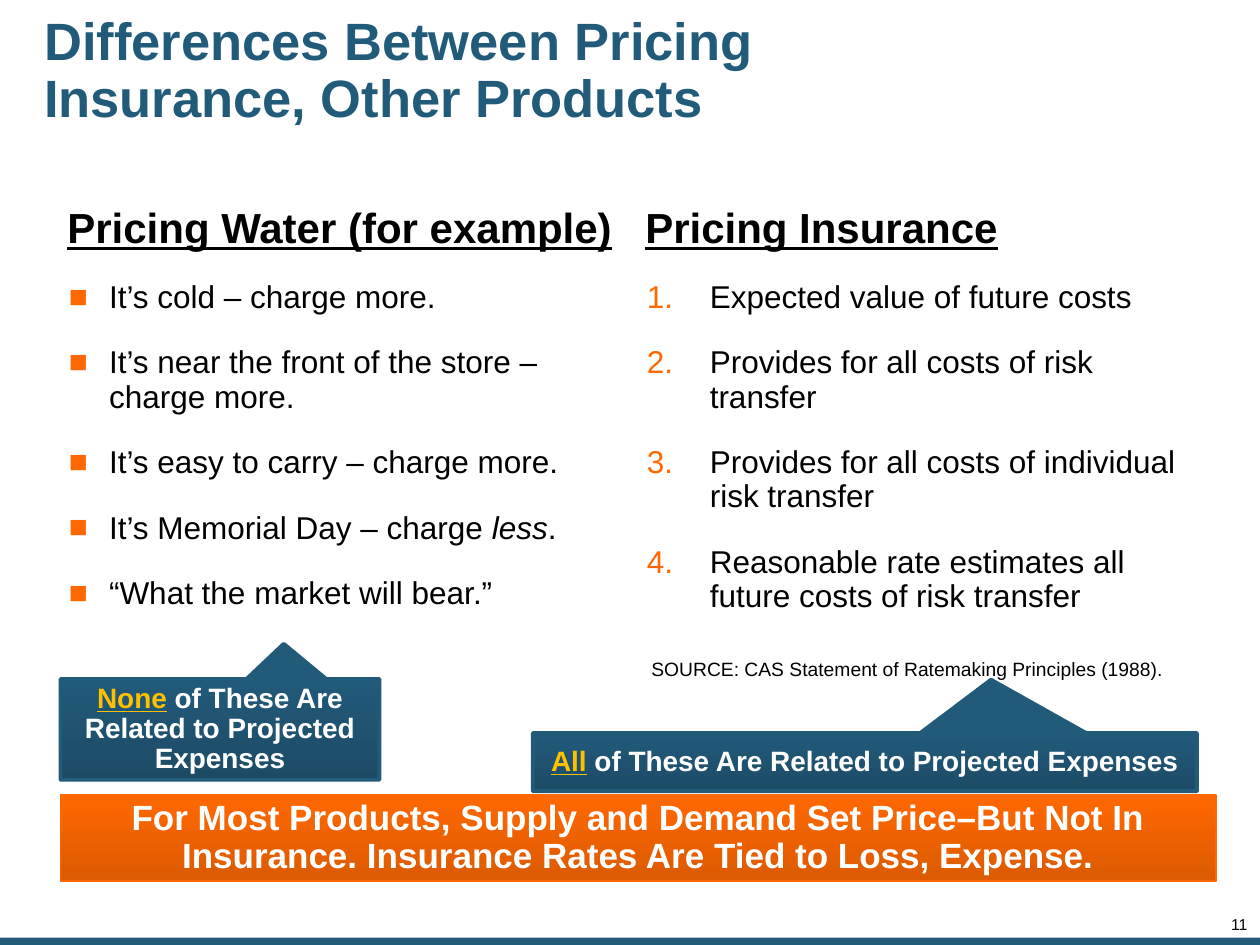
from lxml import etree
from pptx import Presentation
from pptx.dml.color import RGBColor
from pptx.enum import shapes, text
from pptx.oxml.ns import qn
from pptx.util import Cm, Pt

NAVY, ORANGE, GOLD, BLACK, WHITE = "225A7A", "FF6801", "FFC000", "000000", "FFFFFF"


def rgb(value):
    return RGBColor.from_string(value)


def write(shape, paragraphs, size, color, bold=False, anchor="TOP", align="LEFT",
          inset=0.13, line_spacing=0.9, space=0, bullet=None, indent=0):
    """Fill a shape with paragraphs, each a list of (words, run formats)."""
    frame = shape.text_frame
    frame.word_wrap = True
    frame.auto_size = text.MSO_AUTO_SIZE.NONE
    frame.vertical_anchor = text.MSO_ANCHOR[anchor]
    frame.margin_left = frame.margin_right = Cm(inset)
    frame.margin_top = frame.margin_bottom = Cm(inset)
    for index, runs in enumerate(paragraphs):
        paragraph = frame.add_paragraph() if index else frame.paragraphs[0]
        if bullet:
            properties = paragraph._p.get_or_add_pPr()
            properties.set("marL", str(Cm(indent)))
            properties.set("indent", str(-Cm(indent)))
            bullet_color = etree.SubElement(properties, qn("a:buClr"))
            etree.SubElement(bullet_color, qn("a:srgbClr"), val=ORANGE)
            etree.SubElement(properties, qn("a:buFont"), typeface="Arial")
            tag, attribute, value = bullet
            etree.SubElement(properties, qn(tag)).set(attribute, value)
        paragraph.alignment = text.PP_ALIGN[align]
        paragraph.line_spacing = line_spacing
        paragraph.space_before = Pt(space if index else 0)
        paragraph.text = "".join(words for words, _ in runs) if len(runs) == 1 else ""
        for words, formats in runs:
            if len(runs) > 1:
                paragraph.add_run().text = words
            for run in paragraph.runs if len(runs) == 1 else paragraph.runs[-1:]:
                run.font.name = "Arial"
                run.font.size = Pt(size)
                run.font.bold = bold
                run.font.italic = formats.get("italic", False)
                run.font.underline = formats.get("underline", False)
                run.font.color.rgb = rgb(formats.get("color", color))


presentation = Presentation()
presentation.slide_width, presentation.slide_height = Cm(25.4), Cm(19.05)
slide = presentation.slides.add_slide(presentation.slide_layouts[5])

footer_bar = slide.shapes.add_shape(
    shapes.MSO_SHAPE.RECTANGLE, 0, Cm(18.9), Cm(25.4), Cm(0.15))
footer_bar.shadow.inherit = False
footer_bar.fill.solid()
footer_bar.fill.fore_color.rgb = rgb(NAVY)
footer_bar.line.fill.background()

title = slide.shapes.title
title.left, title.top, title.width, title.height = Cm(0.76), Cm(0.25), Cm(20.55), Cm(2.39)
write(title, [[("Differences Between Pricing \vInsurance, Other Products", {})]],
      30, NAVY, bold=True, anchor="MIDDLE")

# Two columns: heading, list, bullet kind and hanging indent
columns = [
    (1.23, "Pricing Water (for example)", ("a:buChar", "char", "■"), 0.81, 10.97, [
        [("It’s cold – charge more.", {})],
        [("It’s near the front of the store – charge more.", {})],
        [("It’s easy to carry – charge more.", {})],
        [("It’s Memorial Day – charge ", {}), ("less", {"italic": True}), (".", {})],
        [("“What the market will bear.”", {})],
    ]),
    (12.88, "Pricing Insurance", ("a:buAutoNum", "type", "arabicPeriod"), 1.27, 7.21, [
        [("Expected value of future costs", {})],
        [("Provides for all costs of risk transfer", {})],
        [("Provides for all costs of individual risk transfer", {})],
        [("Reasonable rate estimates all future costs of risk transfer", {})],
    ]),
]
for left, heading, bullet, indent, height, items in columns:
    heading_box = slide.shapes.add_textbox(Cm(left), Cm(3.45), Cm(11.3), Cm(1.78))
    write(heading_box, [[(heading, {"underline": True})]], 24, BLACK, bold=True,
          anchor="BOTTOM")
    list_box = slide.shapes.add_textbox(Cm(left + 0.03), Cm(5.54), Cm(11.23), Cm(height))
    write(list_box, items, 18, BLACK, space=18, bullet=bullet, indent=indent)

page_number = slide.shapes.add_textbox(Cm(23.9), Cm(18.49), Cm(1.25), Cm(0.33))
write(page_number, [[("11", {})]], 9, BLACK, align="RIGHT", inset=0, line_spacing=0.85)

source_note = slide.shapes.add_textbox(Cm(12.88), Cm(13.13), Cm(11.23), Cm(0.74))
write(source_note, [[("SOURCE: CAS Statement of Ratemaking Principles (1988).", {})]],
      11, BLACK, line_spacing=1)
source_note.text_frame.margin_left = source_note.text_frame.margin_right = Cm(0.25)

callout = shapes.MSO_SHAPE.RECTANGULAR_CALLOUT
emphasis = {"underline": True, "color": GOLD}
related = (" of These Are Related to Projected Expenses", {})
conclusion = ("For Most Products, Supply and Demand Set Price–But Not In Insurance. "
              "Insurance Rates Are Tied to Loss, Expense.")
# Kind, place, pointer tip, gradient, line width, text size, inset, runs
banners = [
    (shapes.MSO_SHAPE.RECTANGLE, (1.22, 16.03, 23.29, 1.73), (), (ORANGE, "DC5A01"),
     1, 20, 0.15, [(conclusion, {})]),
    (callout, (1.22, 13.69, 6.43, 2.03), (0.2, -0.85), (NAVY, "1C4B66"),
     2.25, 16, 0.25, [("None", emphasis), related]),
    (callout, (10.74, 14.78, 13.39, 1.17), (0.19, -1.42), (NAVY, "1C4B66"),
     2.25, 16, 0.25, [("All", emphasis), related]),
]
for kind, place, tip, gradient, line_width, size, inset, runs in banners:
    banner = slide.shapes.add_shape(kind, *map(Cm, place))
    banner.shadow.inherit = False
    for index, value in enumerate(tip):
        banner.adjustments[index] = value
    banner.fill.gradient()
    banner.fill.gradient_angle = 270
    for stop, color in zip(banner.fill.gradient_stops, gradient):
        stop.color.rgb = rgb(color)
    banner.line.color.rgb = rgb(gradient[0])
    banner.line.width = Pt(line_width)
    write(banner, [runs], size, WHITE, bold=True, anchor="MIDDLE", align="CENTER",
          inset=inset)

presentation.save("out.pptx")
